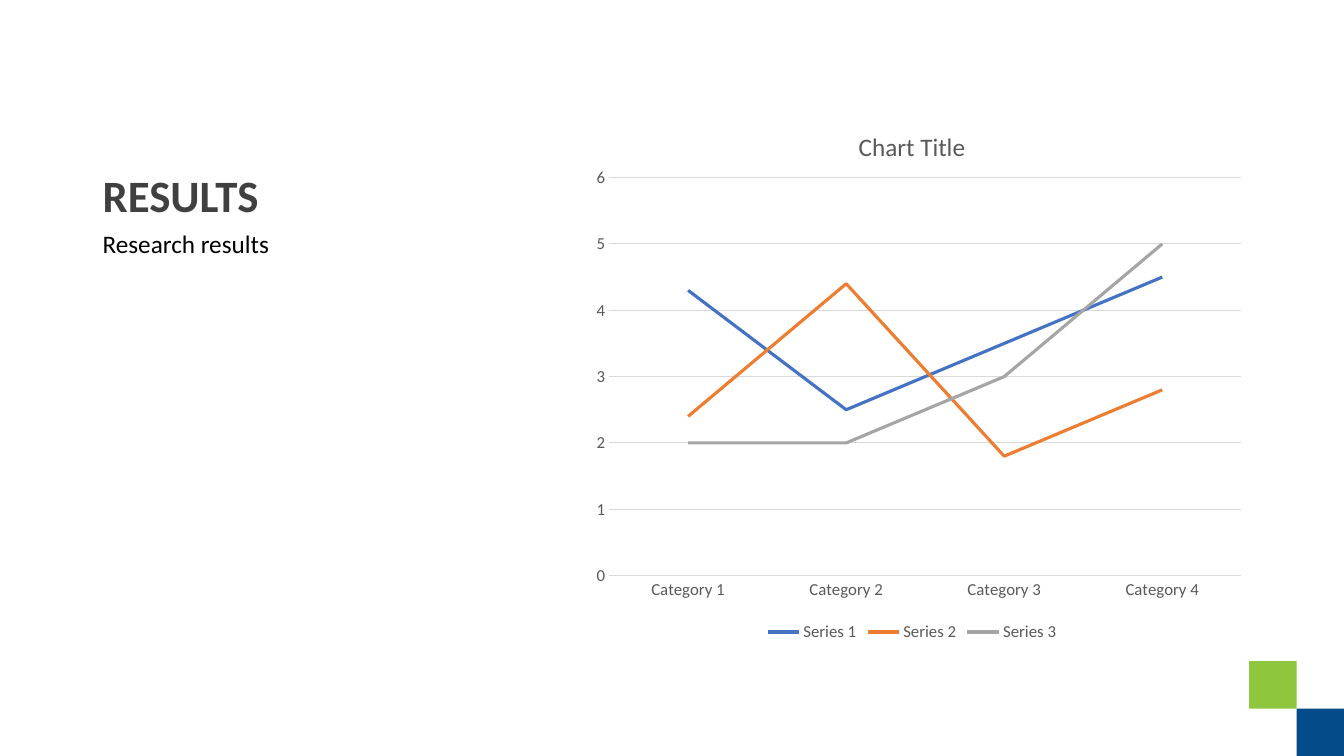
from lxml import etree
from pptx import Presentation
from pptx.chart.data import CategoryChartData as ChartData
from pptx.dml.color import RGBColor
from pptx.enum.chart import XL_CHART_TYPE as Kind, XL_LEGEND_POSITION as Spot
from pptx.enum.chart import XL_MARKER_STYLE as Marker, XL_TICK_MARK as Tick
from pptx.enum.shapes import MSO_SHAPE as Shape
from pptx.enum.text import MSO_ANCHOR as Anchor
from pptx.oxml.ns import qn
from pptx.util import Inches, Pt

FONT = "Calibri"
GREY, RULE = "595959", "D9D9D9"
TEXTS = [  # words, box, anchor, space before, font
    ("RESULTS", (0.92, 0.5, 4.3, 1.75), Anchor.BOTTOM, 0,
     {"size": 32, "color": "404040", "bold": True}),
    ("Research results", (0.92, 2.25, 4.3, 4.17), Anchor.TOP, 10,
     {"size": 18, "color": "000000"}),
]
CATS = ["Category 1", "Category 2", "Category 3", "Category 4"]
SERIES = [
    ("Series 1", (4.3, 2.5, 3.5, 4.5), "4472C4"),
    ("Series 2", (2.4, 4.4, 1.8, 2.8), "ED7D31"),
    ("Series 3", (2, 2, 3, 5), "A5A5A5"),
]
CHART_BOX = (5.67, 1.08, 6.75, 5.33)
PLOT = {"x": 0.055, "y": 0.128, "w": 0.929, "h": 0.741}
LABEL = {"size": 12, "color": GREY}
SIDE = 0.47
SQUARES = ["034B89", "8EC73E"]  # from the corner inwards
WIDE, HIGH = 13.33, 7.5


def rgb(code):
    return RGBColor.from_string(code)


def style(font, size, color, **rest):
    font.color.rgb = rgb(color)
    for name, value in {"name": FONT, "size": Pt(size), "bold": False, **rest}.items():
        setattr(font, name, value)


def stroke(line, color, width):
    line.color.rgb = rgb(color)
    line.width = Pt(width)


def place(box):
    return [Inches(n) for n in box]


def add_text(slide, words, box, anchor, before, font):
    frame = slide.shapes.add_textbox(*place(box)).text_frame
    frame.word_wrap = True
    frame.vertical_anchor = anchor
    para = frame.paragraphs[0]
    para.line_spacing = 0.9
    para.space_before = Pt(before)
    run = para.add_run()
    run.text = words
    style(run.font, **font)


def fix_plot(chart):
    """Pin the inner plot area to the PLOT fractions."""
    area = chart.plots[0]._element.getparent()
    old = area.find(qn("c:layout"))
    if old is not None:
        area.remove(old)
    layout = etree.Element(qn("c:layout"))
    area.insert(0, layout)
    manual = etree.SubElement(layout, qn("c:manualLayout"))
    parts = {"layoutTarget": "inner", "xMode": "edge", "yMode": "edge", **PLOT}
    for tag, value in parts.items():
        etree.SubElement(manual, qn("c:" + tag)).set("val", str(value))


def add_chart(slide):
    data = ChartData()
    data.categories = CATS
    for name, values, _ in SERIES:
        data.add_series(name, values)
    chart = slide.shapes.add_chart(Kind.LINE, *place(CHART_BOX), data).chart
    style(chart.font, 10, "000000")

    chart.has_title = True
    run = chart.chart_title.text_frame.paragraphs[0].add_run()
    run.text = "Chart Title"
    style(run.font, 18, GREY)
    chart.chart_title.include_in_layout = False

    chart.has_legend = True
    chart.legend.position = Spot.BOTTOM
    chart.legend.include_in_layout = False
    style(chart.legend.font, **LABEL)

    cat, val = chart.category_axis, chart.value_axis
    for axis in (cat, val):
        axis.major_tick_mark = axis.minor_tick_mark = Tick.NONE
        style(axis.tick_labels.font, **LABEL)
    stroke(cat.format.line, RULE, 0.75)
    val.format.line.fill.background()
    stroke(val.major_gridlines.format.line, RULE, 0.75)
    val.minimum_scale, val.maximum_scale, val.major_unit = 0, 6, 1

    for line, (_, _, color) in zip(chart.plots[0].series, SERIES):
        line.smooth = False
        line.marker.style = Marker.NONE
        stroke(line.format.line, color, 2.25)
    chart.plots[0].vary_by_categories = False
    fix_plot(chart)


def main():
    deck = Presentation()
    deck.slide_width, deck.slide_height = Inches(WIDE), Inches(HIGH)
    slide = deck.slides.add_slide(deck.slide_layouts[6])
    for step, color in enumerate(SQUARES, 1):
        box = (WIDE - step * SIDE, HIGH - step * SIDE, SIDE, SIDE)
        square = slide.shapes.add_shape(Shape.RECTANGLE, *place(box))
        square.shadow.inherit = False
        square.fill.solid()
        square.fill.fore_color.rgb = rgb(color)
        square.line.fill.background()
    for item in TEXTS:
        add_text(slide, *item)
    add_chart(slide)
    deck.save("out.pptx")


if __name__ == "__main__":
    main()
